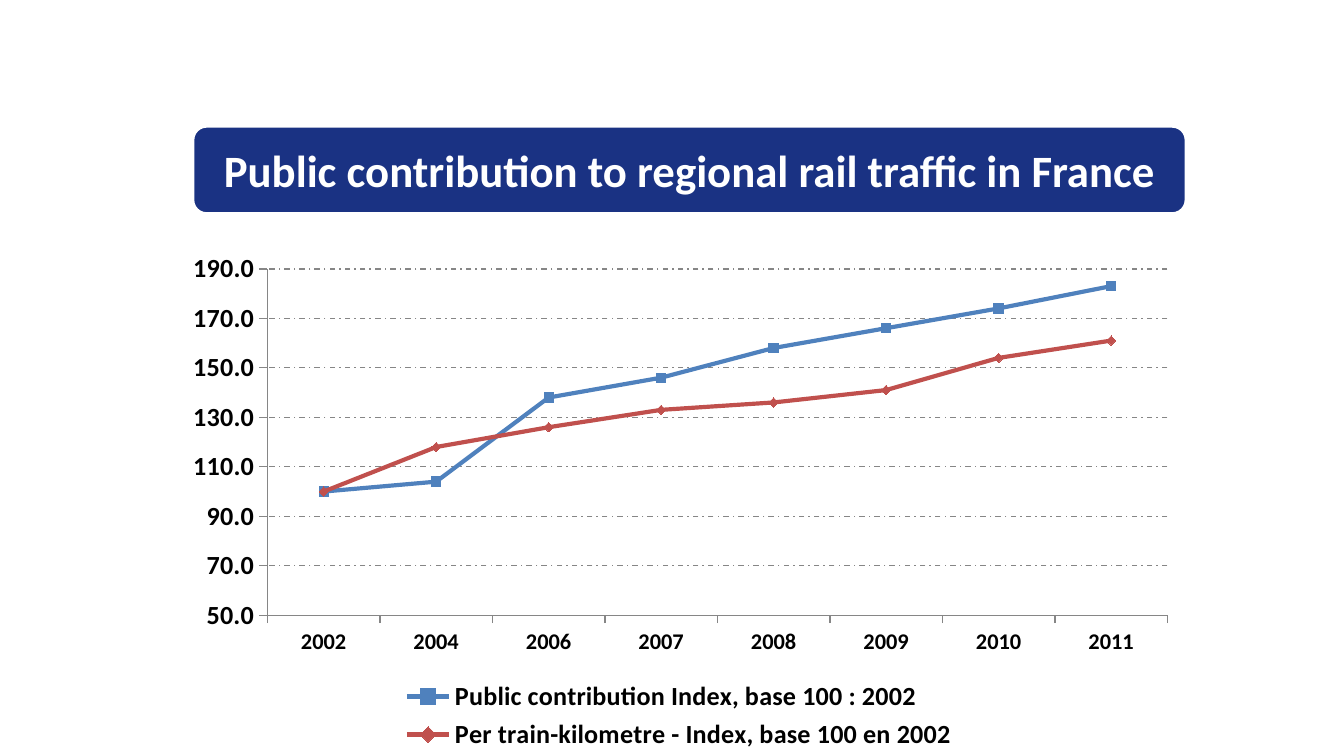
from typing import NamedTuple

import pptx
import pptx.chart.data
import pptx.dml.color
import pptx.enum.chart
import pptx.enum.dml
import pptx.enum.shapes
import pptx.enum.text
import pptx.oxml
import pptx.oxml.ns
import pptx.util

PX = 4572  # EMU per px, 200 px to the inch
FONT = "Calibri"
GREY = "868686"


class Box(NamedTuple):
    left: int
    top: int
    width: int
    height: int

    def emu(self) -> list[int]:
        return [side * PX for side in self]


class Line(NamedTuple):
    name: str
    color: str
    mark: object
    values: tuple[int, ...]


MARK = pptx.enum.chart.XL_MARKER_STYLE
YEARS = ("2002", "2004", "2006", "2007", "2008", "2009", "2010", "2011")
LINES = (
    Line("Public contribution Index, base 100 : 2002", "4F81BD", MARK.SQUARE,
         (100, 104, 138, 146, 158, 166, 174, 183)),
    Line("Per train-kilometre - Index, base 100 en 2002", "C0504D", MARK.DIAMOND,
         (100, 118, 126, 133, 136, 141, 154, 161)),
)


def rgb(code: str) -> pptx.dml.color.RGBColor:
    return pptx.dml.color.RGBColor.from_string(code)


def style(font, size: int, color: str) -> None:
    font.name = FONT
    font.size = pptx.util.Pt(size)
    font.bold = True
    font.color.rgb = rgb(color)


def stroke(line, color: str, width: float) -> None:
    line.color.rgb = rgb(color)
    line.width = pptx.util.Pt(width)


def place(parent, index: int, spots: dict[str, float], inner: bool = False) -> None:
    """Give a chart part a fixed place, in fractions of the chart."""
    for old in parent.findall(pptx.oxml.ns.qn("c:layout")):
        parent.remove(old)
    target = '<c:layoutTarget val="inner"/>' if inner else ""
    modes = "".join(f'<c:{key}Mode val="edge"/>' for key in "xy")
    sides = "".join(f'<c:{key} val="{val}"/>' for key, val in spots.items())
    parent.insert(index, pptx.oxml.parse_xml(
        f'<c:layout {pptx.oxml.ns.nsdecls("c")}><c:manualLayout>'
        f"{target}{modes}{sides}</c:manualLayout></c:layout>"))


def draw_title(slide, box: Box, text: str) -> None:
    kind = pptx.enum.shapes.MSO_SHAPE.ROUNDED_RECTANGLE
    shape = slide.shapes.add_shape(kind, *box.emu())
    shape.shadow.inherit = False
    shape.fill.solid()
    shape.fill.fore_color.rgb = rgb("1A3283")
    stroke(shape.line, "FFFFFF", 3)
    frame = shape.text_frame
    frame.text = text
    frame.word_wrap = True
    frame.vertical_anchor = pptx.enum.text.MSO_ANCHOR.MIDDLE
    para = frame.paragraphs[0]
    para.alignment = pptx.enum.text.PP_ALIGN.CENTER
    style(para.runs[0].font, 24, "FFFFFF")


def draw_chart(slide, box: Box, years: tuple[str, ...], lines: tuple[Line, ...]) -> None:
    data = pptx.chart.data.CategoryChartData(number_format="0.0")
    data.categories = years
    for line in lines:
        data.add_series(line.name, line.values)
    kind = pptx.enum.chart.XL_CHART_TYPE.LINE_MARKERS
    chart = slide.shapes.add_chart(kind, *box.emu(), data).chart
    chart.has_title = False
    style(chart.font, 12, "000000")
    plot = chart.plots[0]
    plot.vary_by_categories = False

    # Series
    for series, line in zip(plot.series, lines):
        series.smooth = False
        stroke(series.format.line, line.color, 2.25)
        mark = series.marker
        mark.style, mark.size = line.mark, 5
        mark.format.fill.solid()
        mark.format.fill.fore_color.rgb = rgb(line.color)
        stroke(mark.format.line, line.color, 0.75)

    # Axes and grid
    for axis, size in ((chart.category_axis, 12), (chart.value_axis, 14)):
        axis.major_tick_mark = pptx.enum.chart.XL_TICK_MARK.OUTSIDE
        axis.minor_tick_mark = pptx.enum.chart.XL_TICK_MARK.NONE
        stroke(axis.format.line, GREY, 0.75)
        style(axis.tick_labels.font, size, "000000")
    scale = chart.value_axis
    scale.minimum_scale, scale.maximum_scale, scale.major_unit = 50, 190, 20
    scale.tick_labels.number_format = "0.0"
    scale.tick_labels.number_format_is_linked = False
    scale.has_major_gridlines = True
    grid = scale.major_gridlines.format.line
    stroke(grid, GREY, 0.75)
    grid.dash_style = pptx.enum.dml.MSO_LINE.DASH_DOT

    # Legend
    chart.has_legend = True
    legend = chart.legend
    legend.position = pptx.enum.chart.XL_LEGEND_POSITION.BOTTOM
    legend.include_in_layout = False
    style(legend.font, 14, "000000")

    # Fixed places
    area = plot._element.getparent()
    place(area, 0, {"x": 0.094, "y": 0.05, "w": 0.887, "h": 0.675}, inner=True)
    place(legend._element, 1, {"x": 0.2, "y": 0.84, "w": 0.6, "h": 0.16})


def main() -> None:
    deck = pptx.Presentation()
    deck.slide_width, deck.slide_height = 2000 * PX, 1125 * PX
    slide = deck.slides.add_slide(deck.slide_layouts[6])
    draw_chart(slide, Box(256, 362, 1510, 764), YEARS, LINES)
    draw_title(slide, Box(285, 186, 1482, 134),
               "Public contribution to regional rail traffic in France")
    deck.save("out.pptx")


if __name__ == "__main__":
    main()
